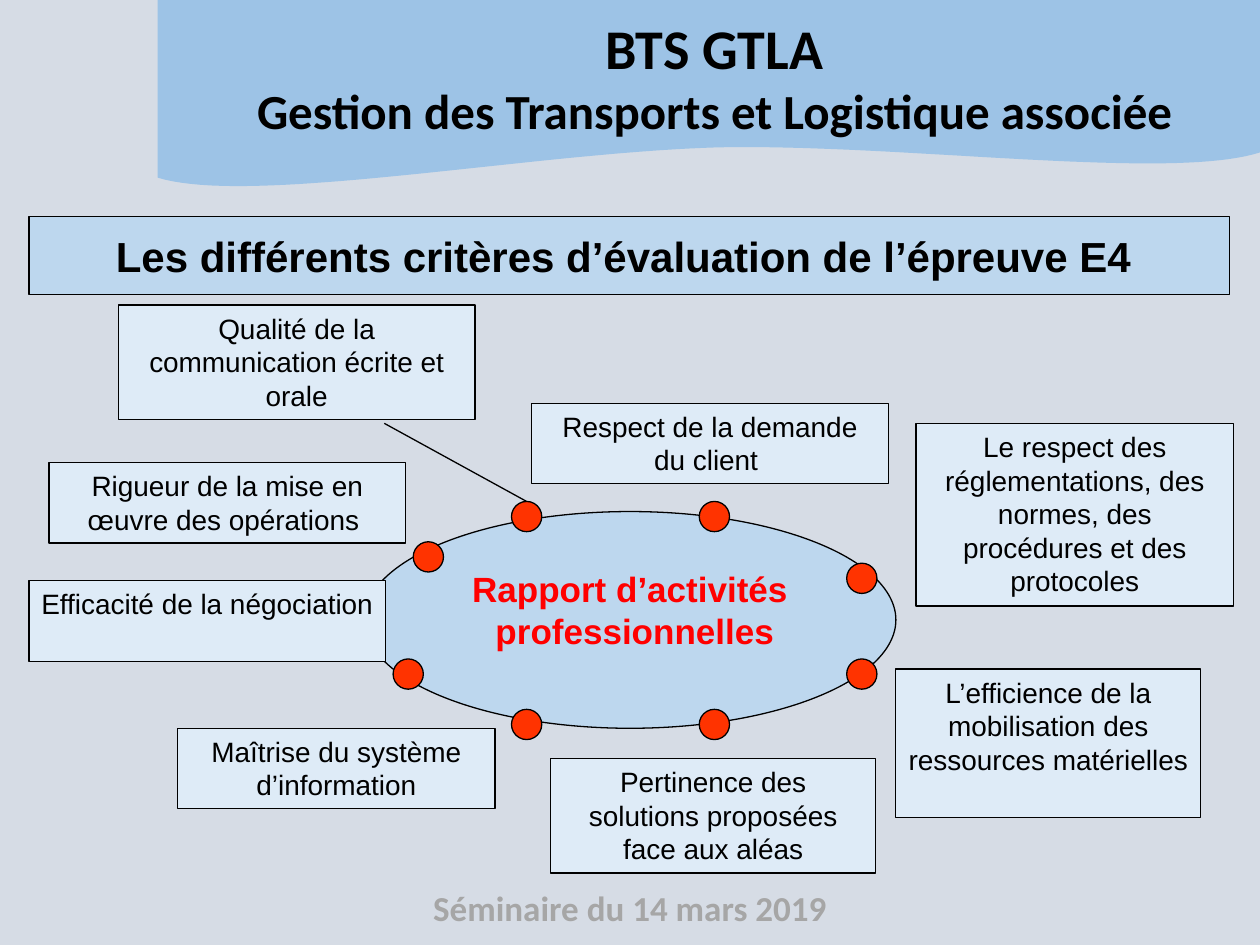
from lxml import etree
from pptx import Presentation
from pptx.dml import color
from pptx.enum import shapes, text
from pptx.oxml import ns
from pptx.util import Inches, Pt

BLACK = "000000"
DOT = 0.24
CARDS = [
    ("Pertinence des solutions proposées face aux aléas", (4.37, 6.02, 2.58, 0.91), (5.55, 5.63)),
    ("Respect de la demande du client ", (4.22, 3.2, 2.83, 0.64), (5.55, 3.98)),
    ("Le respect des réglementations, des normes, des procédures et des protocoles",
     (7.27, 3.36, 2.52, 1.45), (6.72, 4.47)),
    ("Maîtrise du système d’information", (1.41, 5.78, 2.52, 0.64), (4.06, 5.63)),
    ("L’efficience de la mobilisation des ressources matérielles",
     (7.11, 5.31, 2.42, 1.18), (6.72, 5.23)),
    ("Efficacité de la négociation ", (0.23, 4.61, 2.83, 0.64), (3.12, 5.23)),
    ("Rigueur de la mise en œuvre des opérations ", (0.39, 3.67, 2.83, 0.64), (3.28, 4.3)),
    ("Qualité de la communication écrite et orale", (0.94, 2.42, 2.83, 0.91), (4.06, 3.98)),
]


def rgb(code):
    return color.RGBColor.from_string(code)


def place(item, box):
    item.left, item.top, item.width, item.height = map(Inches, box)


def paint(item, fill, line=BLACK):
    item.fill.solid()
    item.fill.fore_color.rgb = rgb(fill)
    if line:
        item.line.color.rgb = rgb(line)
        item.line.width = Pt(0.75)
    else:
        item.line.fill.background()


def write(item, *lines, sizes=(16,), font="Arial", ink=BLACK, bold=False,
          wrap=True, anchor=text.MSO_ANCHOR.TOP):
    frame = item.text_frame
    frame.auto_size = text.MSO_AUTO_SIZE.NONE
    frame.word_wrap = wrap
    frame.vertical_anchor = anchor
    for spot, line in enumerate(lines):
        para = frame.add_paragraph() if spot else frame.paragraphs[0]
        para.alignment = text.PP_ALIGN.CENTER
        run = para.add_run()
        run.text = line
        run.font.name = font
        run.font.size = Pt(sizes[min(spot, len(sizes) - 1)])
        run.font.bold = bold
        run.font.color.rgb = rgb(ink)


def shape(slide, kind, box, fill):
    item = slide.shapes.add_shape(kind, *map(Inches, box))
    item.shadow.inherit = False
    paint(item, fill)
    return item


def label(slide, box, *lines, **form):
    item = slide.shapes.add_textbox(*map(Inches, box))
    write(item, *lines, **form)


def curve(a, b, c, d, steps=40):
    for step in range(1, steps + 1):
        t = step / steps
        s = 1 - t
        yield tuple(s**3 * p + 3 * s * s * t * q + 3 * s * t * t * r + t**3 * e
                    for p, q, r, e in zip(a, b, c, d))


def wave(slide):
    right, mid, left = (10, 1.21), (5.7, 1.17), (1.25, 1.41)
    points = [(10, 0), right,
              *curve(right, (9.29, 1.44), (7.16, 1.14), mid),
              *curve(mid, (4.24, 1.21), (1.99, 1.64), left)]
    draft = slide.shapes.build_freeform(Inches(1.25), 0)
    draft.add_line_segments([(Inches(x), Inches(y)) for x, y in points], close=True)
    item = draft.convert_to_shape()
    item.shadow.inherit = False
    paint(item, "9DC3E6", None)


def link(slide, start, end):
    item = slide.shapes.add_connector(
        shapes.MSO_CONNECTOR.STRAIGHT, *map(Inches, start + end))
    item.line.color.rgb = rgb(BLACK)
    item.line.width = Pt(0.75)
    etree.SubElement(item._element.spPr, ns.qn("a:effectLst"))


def card(slide, words, box, dot):
    shape(slide, shapes.MSO_SHAPE.OVAL, (*dot, DOT, DOT), "FF3300")
    write(shape(slide, shapes.MSO_SHAPE.RECTANGLE, box, "DEEBF7"), words)


def main():
    deck = Presentation()
    deck.slide_width, deck.slide_height = Inches(10), Inches(7.5)
    slide = deck.slides.add_slide(deck.slide_layouts[5])
    slide.background.fill.solid()
    slide.background.fill.fore_color.rgb = rgb("D6DCE5")

    title = slide.shapes.title
    place(title, (0.23, 1.72, 9.53, 0.62))
    paint(title, "BDD7EE")
    write(title, "Les différents critères d’évaluation de l’épreuve E4 ",
          sizes=(24,), bold=True, wrap=False, anchor=text.MSO_ANCHOR.MIDDLE)

    wave(slide)
    label(slide, (1.88, 0.06, 7.58, 1.11), "BTS GTLA",
          "Gestion des Transports et Logistique associée",
          sizes=(32, 28), font="Calibri", bold=True)
    label(slide, (2.5, 6.99, 5, 0.44), "Séminaire du 14 mars 2019",
          sizes=(20,), font="Calibri", ink="A6A6A6", bold=True)

    core = shape(slide, shapes.MSO_SHAPE.OVAL, (2.89, 4.06, 4.22, 1.72), "BDD7EE")
    write(core, "Rapport d’activités", " professionnelles", sizes=(20,), ink="FF0000",
          bold=True, wrap=False, anchor=text.MSO_ANCHOR.MIDDLE)
    core.text_frame.margin_bottom = Inches(0.22)

    for words, box, dot in CARDS:
        card(slide, words, box, dot)
    link(slide, (3.05, 3.36), (4.18, 3.98))
    deck.save("out.pptx")


if __name__ == "__main__":
    main()
